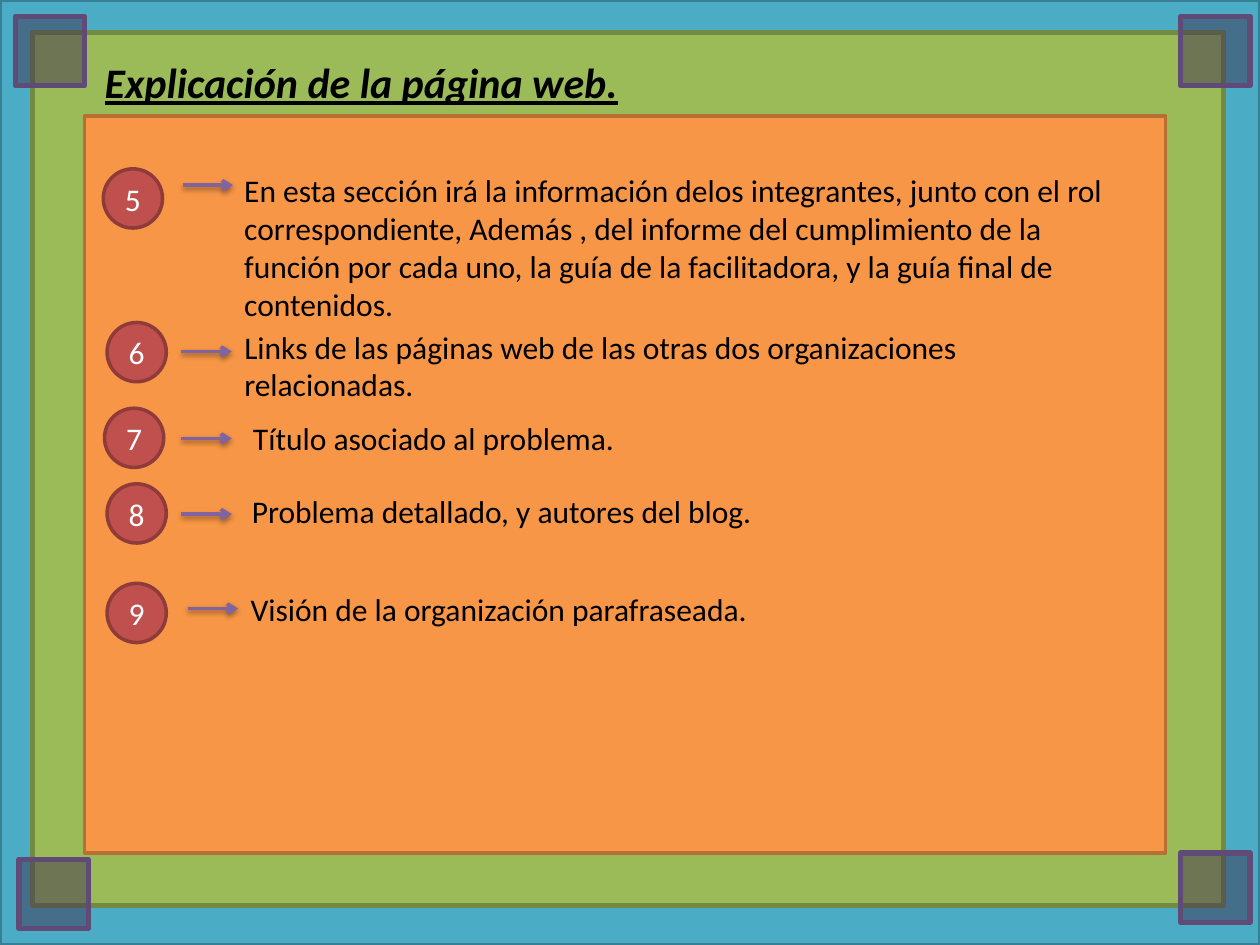
"""Build the slide that explains the numbered parts of the web page."""
from dataclasses import dataclass

from lxml import etree
from pptx import Presentation
from pptx import util as u
from pptx.dml.color import RGBColor
from pptx.enum import shapes, text
from pptx.oxml.ns import qn


@dataclass(frozen=True)
class Theme:
    """Colours, font and type sizes of the slide."""
    font: str = "Calibri"
    title_size: int = 24
    body_size: int = 18
    ink: str = "000000"
    light: str = "FFFFFF"
    sea: tuple = ("4BACC6", "377F92")
    grass: tuple = ("9BBB59", "738A42")
    corner: tuple = ("403152", "5F4A78")
    panel: tuple = ("F79646", "B76F34")
    badge: tuple = ("C0504D", "8E3B39")
    arrow: str = "8064A2"


class SlideBuilder:
    """Draw styled elements on the current slide."""

    def __init__(self, slide, theme):
        """Keep the slide and its theme."""
        self.slide = slide
        self.theme = theme

    def set_text(self, shape, words, size, color, align=text.PP_ALIGN.LEFT, wrap=True, **style):
        """Put one formatted paragraph in a shape."""
        frame = shape.text_frame
        frame.text = words
        frame.word_wrap = wrap
        paragraph = frame.paragraphs[0]
        paragraph.alignment = align
        font = paragraph.runs[0].font
        font.color.rgb = RGBColor.from_string(color)
        values = {"name": self.theme.font, "size": u.Pt(size), **style}
        for name, value in values.items():
            setattr(font, name, value)

    def title(self, words, left, top, width, height):
        """Place the title in front of the panels."""
        shape = self.slide.shapes.title
        place = {"left": left, "top": top, "width": width, "height": height}
        for name, value in place.items():
            setattr(shape, name, u.Inches(value))
        self.set_text(shape, words, self.theme.title_size, self.theme.ink,
                      wrap=False, bold=True, italic=True, underline=True)
        shape.text_frame.auto_size = text.MSO_AUTO_SIZE.NONE
        shape.text_frame.vertical_anchor = text.MSO_ANCHOR.TOP
        shape.element.getparent().append(shape.element)

    def block(self, kind, box, colors, weight, opacity=100):
        """Add a filled and outlined preset shape."""
        shape = self.slide.shapes.add_shape(kind, *map(u.Inches, box))
        shape.shadow.inherit = False
        fill, line = colors
        shape.fill.solid()
        shape.fill.fore_color.rgb = RGBColor.from_string(fill)
        if opacity < 100:
            color = next(shape.element.iter(qn("a:srgbClr")))
            etree.SubElement(color, qn("a:alpha"), val=str(opacity * 1000))
        shape.line.color.rgb = RGBColor.from_string(line)
        shape.line.width = u.Pt(weight)
        return shape

    def badge(self, number, left, top, side=0.47):
        """Add a numbered circle."""
        shape = self.block(shapes.MSO_SHAPE.OVAL, (left, top, side, side), self.theme.badge, 2)
        shape.text_frame.vertical_anchor = text.MSO_ANCHOR.MIDDLE
        self.set_text(shape, str(number), self.theme.body_size, self.theme.light,
                      text.PP_ALIGN.CENTER)

    def arrow(self, left, top, length=0.4):
        """Add a horizontal arrow with a soft shadow."""
        ends = map(u.Inches, (left, top, left + length, top))
        connector = self.slide.shapes.add_connector(shapes.MSO_CONNECTOR.STRAIGHT, *ends)
        connector.line.color.rgb = RGBColor.from_string(self.theme.arrow)
        connector.line.width = u.Pt(2)
        line = connector.element.spPr.find(qn("a:ln"))
        etree.SubElement(line, qn("a:tailEnd"), type="arrow")
        effects = etree.SubElement(connector.element.spPr, qn("a:effectLst"))
        shadow = etree.SubElement(effects, qn("a:outerShdw"), blurRad=str(u.Pt(3.1)),
                                  dist=str(u.Pt(1.6)), dir="5400000", rotWithShape="0")
        color = etree.SubElement(shadow, qn("a:srgbClr"), val=self.theme.ink)
        etree.SubElement(color, qn("a:alpha"), val="38000")

    def label(self, words, box, wrap):
        """Add an explanation."""
        shape = self.slide.shapes.add_textbox(*map(u.Inches, box))
        self.set_text(shape, words, self.theme.body_size, self.theme.ink, wrap=wrap)


def main():
    """Build and save the presentation."""
    presentation = Presentation()
    presentation.slide_width, presentation.slide_height = u.Inches(10), u.Inches(7.5)
    theme = Theme()
    builder = SlideBuilder(presentation.slides.add_slide(presentation.slide_layouts[5]), theme)
    rectangle = shapes.MSO_SHAPE.RECTANGLE

    builder.block(rectangle, (0, 0, 10, 7.5), theme.sea, 2)
    builder.block(rectangle, (0.26, 0.26, 9.45, 6.93), theme.grass, 3)
    for left, top in ((0.12, 0.13), (9.37, 0.13), (0.15, 6.82), (9.37, 6.77)):
        builder.block(rectangle, (left, top, 0.55, 0.55), theme.corner, 3, opacity=50)
    builder.block(rectangle, (0.67, 0.92, 8.58, 5.85), theme.panel, 2)
    builder.title("Explicación de la página web.", 0.73, 0.4, 4.3, 0.5)

    items = (
        ((0.82, 1.34), (1.45, 1.47), (1.84, 1.31, 7.16, 1.31), True,
         "En esta sección irá la información delos integrantes, junto con el rol "
         "correspondiente, Además , del informe del cumplimiento de la función por cada uno, "
         "la guía de la facilitadora, y la guía final de contenidos."),
        ((0.85, 2.56), (1.44, 2.79), (1.84, 2.55, 7.15, 0.71), True,
         "Links de las páginas web de las otras dos organizaciones relacionadas."),
        ((0.83, 3.24), (1.44, 3.48), (1.91, 3.28, 3.1, 0.4), False,
         "Título asociado al problema."),
        ((0.85, 3.84), (1.44, 4.08), (1.9, 3.86, 4.22, 0.4), False,
         "Problema detallado, y autores del blog."),
        ((0.85, 4.63), (1.49, 4.83), (1.89, 4.63, 4.19, 0.4), False,
         "Visión de la organización parafraseada."),
    )
    for number, (badge, arrow, box, wrap, words) in enumerate(items, start=5):
        builder.badge(number, *badge)
        builder.arrow(*arrow)
        builder.label(words, box, wrap)

    presentation.save("out.pptx")


if __name__ == "__main__":
    main()
